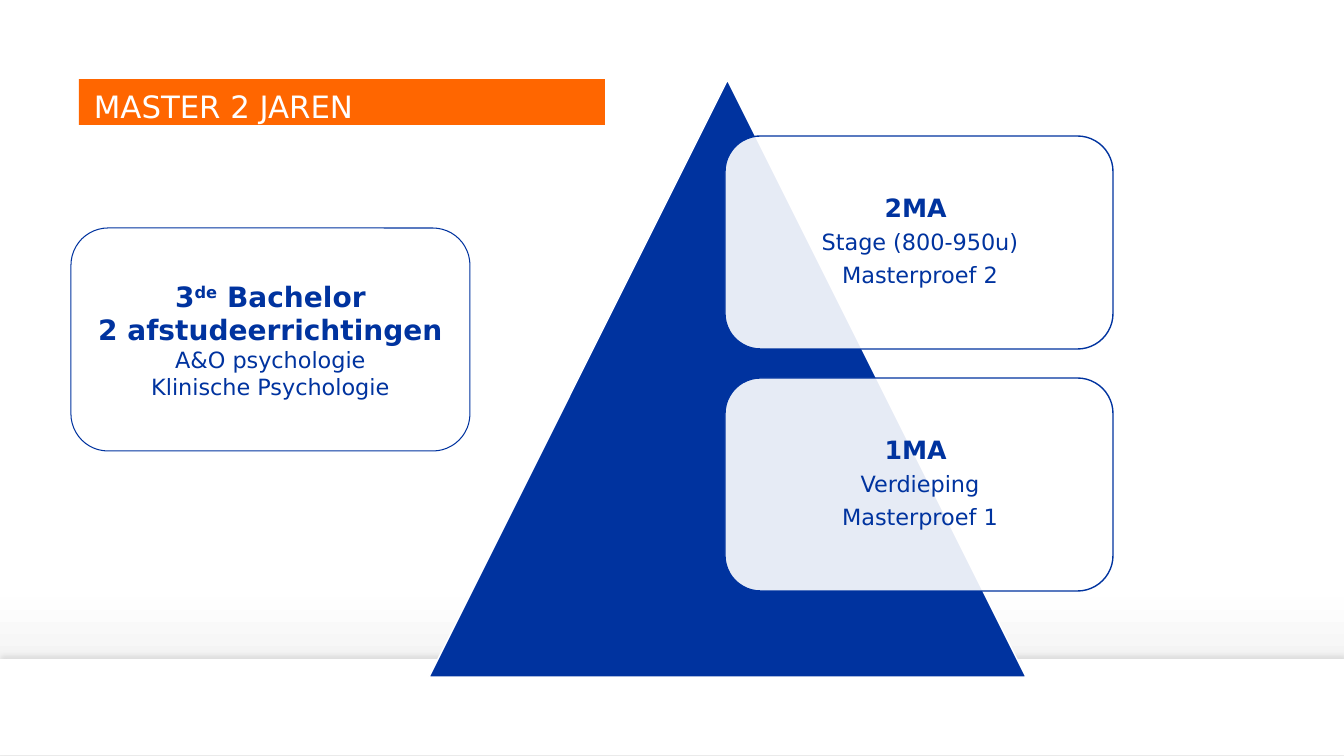
from lxml import etree
from pptx import Presentation
from pptx.dml.color import RGBColor
from pptx.enum.shapes import MSO_SHAPE
from pptx.enum.text import MSO_ANCHOR, PP_ALIGN
from pptx.oxml import parse_xml
from pptx.oxml.ns import qn
from pptx.util import Pt

PX = 914400 / 100.8
RECT, ROUND = MSO_SHAPE.RECTANGLE, MSO_SHAPE.ROUNDED_RECTANGLE
TRIANGLE = MSO_SHAPE.ISOSCELES_TRIANGLE
CENTER, LEFT = PP_ALIGN.CENTER, PP_ALIGN.LEFT
MIDDLE, BOTTOM = MSO_ANCHOR.MIDDLE, MSO_ANCHOR.BOTTOM
BLUE, WHITE, ORANGE = "00339F", "FFFFFF", "FF6600"
FONT = "DejaVu Sans"
NS = 'xmlns:a="http://schemas.openxmlformats.org/drawingml/2006/main"'
HEAD = {"size": Pt(18), "bold": True}
BODY = {"size": Pt(16), "bold": False}
LEAD = {"size": Pt(20), "bold": True}


def px(n):
    return round(n * PX)


def rgb(value):
    return RGBColor.from_string(value)


def add_background(s, stops):
    s.background.fill.gradient()
    grad = s.background._cSld.find(".//" + qn("a:gradFill"))
    items = "".join(
        f'<a:gs pos="{pos * 1000}"><a:srgbClr val="{color}"/></a:gs>' for pos, color in stops
    )
    grad.getparent().replace(grad, parse_xml(
        f'<a:gradFill {NS} rotWithShape="1"><a:gsLst>{items}</a:gsLst>'
        '<a:lin ang="5400000" scaled="0"/></a:gradFill>'
    ))


def add_box(s, kind, box, fill=None, line=None, width=1, alpha=None):
    sp = s.shapes.add_shape(kind, *map(px, box))
    sp.shadow.inherit = False
    if fill:
        sp.fill.solid()
        sp.fill.fore_color.rgb = rgb(fill)
    else:
        sp.fill.background()
    if alpha:
        color = sp.fill._xPr.find(qn("a:solidFill"))[0]
        etree.SubElement(color, qn("a:alpha"), val=str(alpha * 1000))
    if line:
        sp.line.color.rgb = rgb(line)
        sp.line.width = Pt(width)
    else:
        sp.line.fill.background()
    return sp


def add_top_shadow(sp):
    effects = sp._element.spPr.find(qn("a:effectLst"))
    effects.append(parse_xml(
        f'<a:outerShdw {NS} blurRad="{Pt(4)}" dist="{Pt(3)}" dir="16200000" rotWithShape="0">'
        '<a:srgbClr val="000000"><a:alpha val="10000"/></a:srgbClr></a:outerShdw>'
    ))


def add_text(sp, lines, margins, color=BLUE, anchor=MIDDLE, wrap=True, **layout):
    tf = sp.text_frame
    tf.word_wrap = wrap
    tf.vertical_anchor = anchor
    for side, margin in zip(("left", "top", "right", "bottom"), margins):
        setattr(tf, f"margin_{side}", px(margin))
    for i, (runs, style) in enumerate(lines):
        p = tf.paragraphs[0] if i == 0 else tf.add_paragraph()
        for name, value in layout.items():
            setattr(p, name, value)
        for text, raised in runs:
            r = p.add_run()
            r.text = text
            r.font.color.rgb = rgb(color)
            for name, value in {"name": FONT, **style}.items():
                setattr(r.font, name, value)
            if raised:
                r.font._element.set("baseline", "30000")


def plain(text, style):
    return [(text, False)], style


def add_year(s, top, heading, topics):
    add_box(s, ROUND, (725, top, 388, 213), WHITE, BLUE, alpha=90)
    label = s.shapes.add_textbox(*map(px, (736, top + 10, 368, 192)))
    lines = [plain(heading, HEAD)] + [plain(topic, BODY) for topic in topics]
    add_text(label, lines, (7, 7, 7, 7),
             alignment=CENTER, line_spacing=0.9, space_after=Pt(6))


def main():
    prs = Presentation()
    prs.slide_width, prs.slide_height = px(1344), px(756)
    s = prs.slides.add_slide(prs.slide_layouts[6])
    add_background(s, [(0, WHITE), (79, "FEFEFE"), (92, "EDEDED")])

    footer = add_box(s, RECT, (0, 659, 1344, 96), WHITE)
    add_top_shadow(footer)

    add_box(s, TRIANGLE, (429, 80, 597, 597), BLUE, WHITE)
    add_year(s, 136, "2MA ", ["Stage (800-950u)", "Masterproef 2"])
    add_year(s, 378, "1MA ", ["Verdieping", "Masterproef 1"])

    title = add_box(s, RECT, (79, 79, 526, 46), ORANGE)
    add_text(title, [plain("MASTER 2 JAREN", {"size": Pt(22)})], (15, 4, 16, 0),
             WHITE, BOTTOM, False, alignment=LEFT, line_spacing=0.9)

    bachelor = add_box(s, ROUND, (71, 228, 399, 223), line=BLUE, width=0.75)
    lines = [
        ([("3", False), ("de", True), (" Bachelor", False)], LEAD),
        plain("2 afstudeerrichtingen", LEAD),
        plain("A&O psychologie", BODY),
        plain("Klinische Psychologie", BODY),
    ]
    add_text(bachelor, lines, (10, 5, 10, 5), alignment=CENTER)
    prs.save("out.pptx")


if __name__ == "__main__":
    main()
